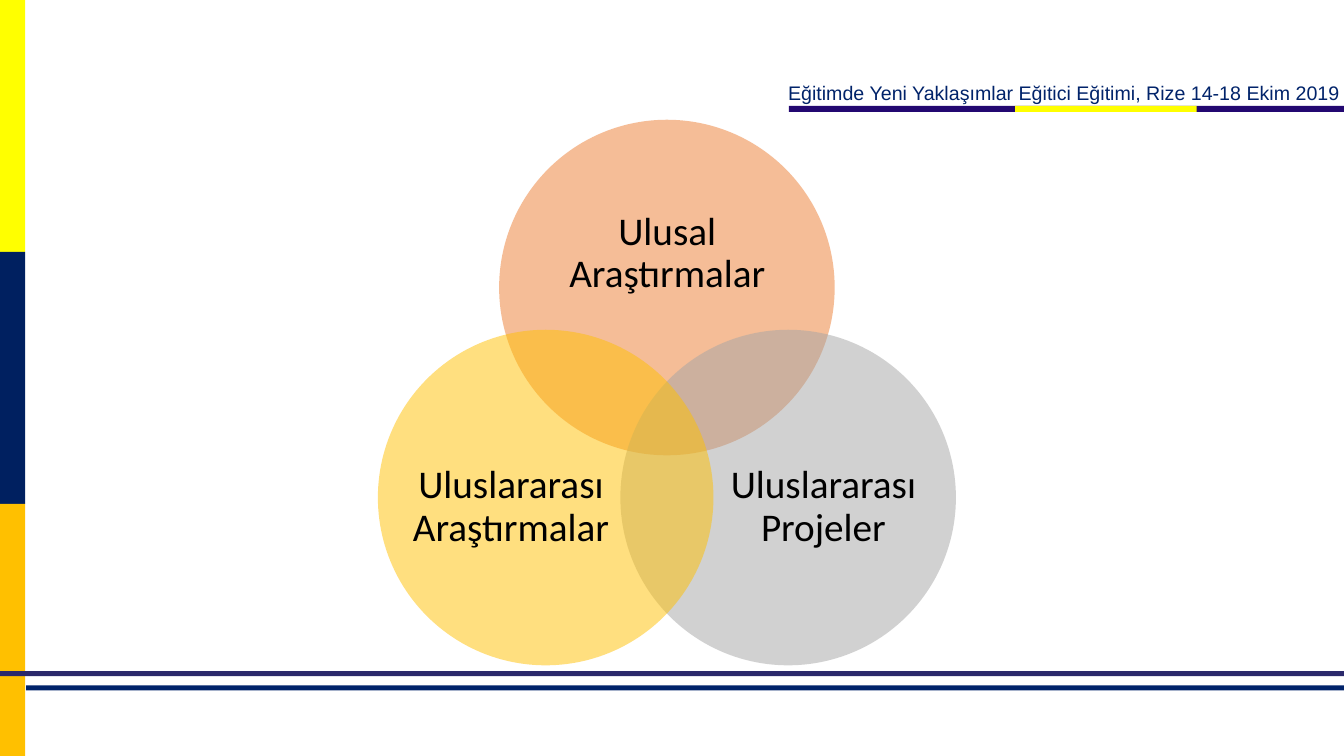
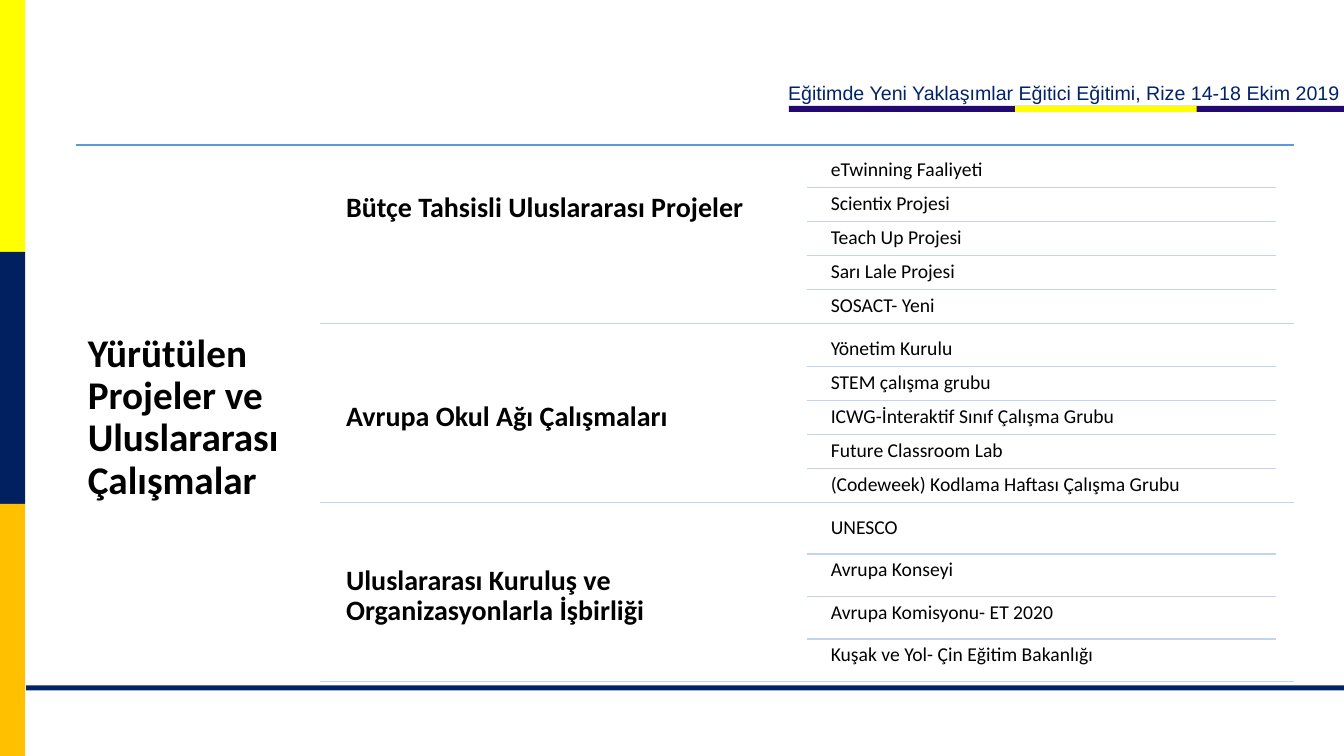
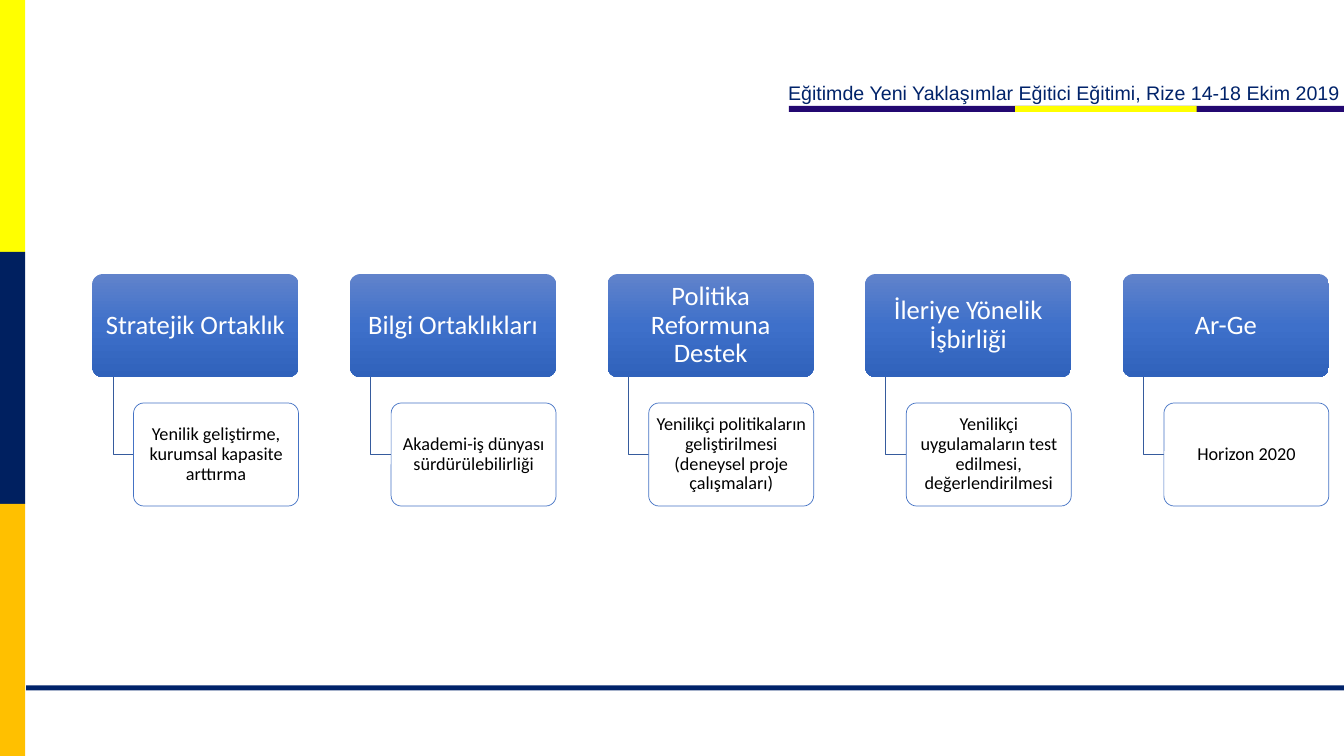
from copy import deepcopy
from dataclasses import dataclass
from math import cos, radians, sin
from typing import Optional

from lxml import etree
from pptx import Presentation
from pptx import presentation as prs
from pptx import slide as sld
from pptx.dml import color
from pptx.enum import shapes, text
from pptx.oxml import ns
from pptx.shapes import autoshape, base
from pptx.text import text as txt
from pptx import util as u

RGB = color.RGBColor
NAVY = RGB(0x01, 0x23, 0x6A)
DEEP_NAVY = RGB(0x00, 0x20, 0x60)
INDIGO = RGB(0x2B, 0x29, 0x6B)
PURPLE = RGB(0x23, 0x08, 0x71)
YELLOW = RGB(0xFF, 0xFF, 0x00)
AMBER = RGB(0xFF, 0xC0, 0x00)
ORANGE = RGB(0xED, 0x7D, 0x31)
GREY = RGB(0xA5, 0xA5, 0xA5)
BLACK = RGB(0x00, 0x00, 0x00)
WHITE = RGB(0xFF, 0xFF, 0xFF)
SKY = RGB(0x5B, 0x9B, 0xD5)
PALE_BLUE = RGB(0xC4, 0xD5, 0xEB)
BLUE = RGB(0x44, 0x72, 0xC4)
ELBOW_BLUE = RGB(0x36, 0x5B, 0x9D)
HEAD_GRADIENT = ((0, RGB(0x61, 0x83, 0xCB)), (0.5, RGB(0x3E, 0x70, 0xCA)),
                 (1, RGB(0x30, 0x62, 0xBB)))

SLIDE_WIDTH, SLIDE_HEIGHT = 960, 540
TITLE_ONLY, BLANK = 5, 6
EVENT = "Eğitimde Yeni Yaklaşımlar Eğitici Eğitimi, Rize 14-18 Ekim 2019"


@dataclass(frozen=True)
class Box:
    left: float
    top: float
    width: float
    height: float


@dataclass(frozen=True)
class Style:
    size: float
    color: RGB = BLACK
    bold: bool = False
    font: str = "Calibri"
    align: text.PP_ALIGN = text.PP_ALIGN.LEFT
    anchor: text.MSO_ANCHOR = text.MSO_ANCHOR.MIDDLE
    spacing: float = 0.9
    inset_x: float = 0
    inset_y: float = 0
    wrap: bool = True


CENTER = text.PP_ALIGN.CENTER
TOP = text.MSO_ANCHOR.TOP
EVENT_STYLE = Style(14, NAVY, font="Arial", anchor=TOP, spacing=1,
                    inset_x=7.2, inset_y=3.6, wrap=False)
CIRCLE_STYLE = Style(28, align=CENTER)
TITLE_STYLE = Style(28, bold=True, inset_x=8.4, inset_y=8.4)
GROUP_STYLE = Style(20, bold=True, inset_x=6, inset_y=6)
ITEM_STYLE = Style(14, anchor=TOP, inset_x=4.2, inset_y=4.2)
HEAD_STYLE = Style(19, WHITE, align=CENTER, inset_x=2.8, inset_y=2)
DETAIL_STYLE = Style(13, align=CENTER, inset_x=2, inset_y=1.5)


# Drawing helpers
def place(shape: base.BaseShape, box: Box) -> None:
    shape.left, shape.top = u.Pt(box.left), u.Pt(box.top)
    shape.width, shape.height = u.Pt(box.width), u.Pt(box.height)


def write(frame: txt.TextFrame, content: str, style: Style) -> None:
    frame.auto_size = text.MSO_AUTO_SIZE.NONE
    frame.word_wrap = style.wrap
    frame.vertical_anchor = style.anchor
    frame.margin_left = frame.margin_right = u.Pt(style.inset_x)
    frame.margin_top = frame.margin_bottom = u.Pt(style.inset_y)
    paragraph = frame.paragraphs[0]
    paragraph.alignment = style.align
    paragraph.line_spacing = style.spacing
    run = paragraph.add_run()
    run.text = content
    run.font.name, run.font.size = style.font, u.Pt(style.size)
    run.font.bold = style.bold
    run.font.color.rgb = style.color


def add_text(slide: sld.Slide, box: Box, content: str, style: Style) -> None:
    shape = slide.shapes.add_textbox(0, 0, 0, 0)
    place(shape, box)
    write(shape.text_frame, content, style)


def add_shape(slide: sld.Slide, kind: shapes.MSO_SHAPE, box: Box,
              fill: Optional[RGB] = None, opacity: int = 100,
              line: Optional[RGB] = None) -> autoshape.Shape:
    shape = slide.shapes.add_shape(kind, 0, 0, 0, 0)
    place(shape, box)
    shape.shadow.inherit = False
    if fill is not None:
        shape.fill.solid()
        shape.fill.fore_color.rgb = fill
        if opacity < 100:
            tone = shape.element.spPr.find(".//" + ns.qn("a:srgbClr"))
            etree.SubElement(tone, ns.qn("a:alpha"), val=str(opacity * 1000))
    if line is None:
        shape.line.fill.background()
    else:
        shape.line.color.rgb, shape.line.width = line, u.Pt(0.5)
    return shape


def add_bar(slide: sld.Slide, box: Box, fill: RGB) -> None:
    add_shape(slide, shapes.MSO_SHAPE.RECTANGLE, box, fill)


def add_rule(slide: sld.Slide, left: float, right: float, y: float, tone: RGB) -> None:
    rule = slide.shapes.add_connector(shapes.MSO_CONNECTOR.STRAIGHT, u.Pt(left),
                                      u.Pt(y), u.Pt(right), u.Pt(y))
    rule.line.color.rgb, rule.line.width = tone, u.Pt(1)
    etree.SubElement(rule.element.spPr, ns.qn("a:effectLst"))


def add_slide(presentation: prs.Presentation, layout: int) -> sld.Slide:
    """Add a slide with the shared bands, event line and rules."""
    slide = presentation.slides.add_slide(presentation.slide_layouts[layout])
    add_text(slide, Box(555.84, 54, 411.84, 24.5), EVENT, EVENT_STYLE)
    band = SLIDE_HEIGHT / 3
    for index, fill in enumerate((YELLOW, DEEP_NAVY, AMBER)):
        add_bar(slide, Box(0, index * band, 18, band), fill)
    add_bar(slide, Box(563.5, 75.6, SLIDE_WIDTH - 563.5, 4.3), PURPLE)
    add_bar(slide, Box(725.2, 75.6, 129.6, 4.3), YELLOW)
    add_bar(slide, Box(18.7, 489.5, SLIDE_WIDTH - 18.7, 3.6), NAVY)
    return slide


# Slide 1: three overlapping circles
@dataclass(frozen=True)
class Circle:
    label: str
    fill: RGB
    angle: float
    label_box: Box


CIRCLES = (
    Circle("Ulusal Araştırmalar", ORANGE, -90, Box(388.8, 127.4, 175.7, 108)),
    Circle("Uluslararası Projeler", GREY, 30, Box(516.2, 296.6, 144, 131.8)),
    Circle("Uluslararası Araştırmalar", AMBER, 150, Box(293, 296.6, 144, 131.8)),
)


def build_research(presentation: prs.Presentation) -> None:
    slide = add_slide(presentation, BLANK)
    hub_x, hub_y, reach, diameter = 476.4, 305.4, 100, 239.7
    for circle in CIRCLES:
        angle = radians(circle.angle)
        left = hub_x + reach * cos(angle) - diameter / 2
        top = hub_y + reach * sin(angle) - diameter / 2
        add_shape(slide, shapes.MSO_SHAPE.OVAL, Box(left, top, diameter, diameter),
                  circle.fill, opacity=50)
        add_text(slide, circle.label_box, circle.label, CIRCLE_STYLE)
    add_bar(slide, Box(0, 479.4, SLIDE_WIDTH, 3.6), INDIGO)


# Slide 2: titled list of project groups
@dataclass(frozen=True)
class Group:
    name: str
    items: tuple[str, ...]
    name_height: float = 121.7


GROUPS = (
    Group("Bütçe Tahsisli Uluslararası Projeler",
          ("eTwinning Faaliyeti", "Scientix Projesi", "Teach Up Projesi",
           "Sarı Lale Projesi", "SOSACT- Yeni"), name_height=78.5),
    Group("Avrupa Okul Ağı Çalışmaları",
          ("Yönetim Kurulu", "STEM çalışma grubu",
           "ICWG-İnteraktif Sınıf Çalışma Grubu", "Future Classroom Lab",
           "(Codeweek) Kodlama Haftası Çalışma Grubu")),
    Group("Uluslararası Kuruluş ve Organizasyonlarla İşbirliği",
          ("UNESCO", "Avrupa Konseyi", "Avrupa Komisyonu- ET 2020",
           "Kuşak ve Yol- Çin Eğitim Bakanlığı")),
)


def build_projects(presentation: prs.Presentation) -> None:
    slide = add_slide(presentation, TITLE_ONLY)
    left, right, list_top = 54.3, 924.3, 103.5
    group_height, group_gap, column_width = 121.7, 6.1, 334.8
    add_rule(slide, left, right, list_top, SKY)
    title = slide.shapes.title
    place(title, Box(left, list_top, 174, 390))
    write(title.text_frame, "Yürütülen Projeler ve Uluslararası Çalışmalar", TITLE_STYLE)
    for index, group in enumerate(GROUPS):
        top = list_top + group_gap + index * (group_height + group_gap)
        add_text(slide, Box(241.2, top, column_width, group.name_height),
                 group.name, GROUP_STYLE)
        row_height = group_height / len(group.items)
        for row, item in enumerate(group.items):
            y = top + row * row_height
            if row:
                add_rule(slide, 576.2, 911.2, y, PALE_BLUE)
            add_text(slide, Box(589.2, y, column_width, row_height), item, ITEM_STYLE)
        add_rule(slide, 228.3, right, top + group_height, PALE_BLUE)


# Slide 3: five headings, each with a detail box below
@dataclass(frozen=True)
class Branch:
    heading: str
    detail: str


BRANCHES = (
    Branch("Stratejik Ortaklık", "Yenilik geliştirme, kurumsal kapasite arttırma"),
    Branch("Bilgi Ortaklıkları", "Akademi-iş dünyası sürdürülebilirliği"),
    Branch("Politika Reformuna Destek",
           "Yenilikçi politikaların geliştirilmesi (deneysel proje çalışmaları)"),
    Branch("İleriye Yönelik İşbirliği",
           "Yenilikçi uygulamaların test edilmesi, değerlendirilmesi"),
    Branch("Ar-Ge", "Horizon 2020"),
)


def add_card(slide: sld.Slide, box: Box, fill: Optional[RGB] = None,
             line: Optional[RGB] = None) -> autoshape.Shape:
    card = add_shape(slide, shapes.MSO_SHAPE.ROUNDED_RECTANGLE, box, fill, 90, line)
    card.adjustments[0] = 0.1
    return card


def fill_gradient(shape: autoshape.Shape) -> None:
    shape.fill.gradient()
    shape.fill.gradient_angle = 270
    stops = shape.element.spPr.find(".//" + ns.qn("a:gsLst"))
    stops.insert(1, deepcopy(stops[0]))
    for stop, (position, tone) in zip(shape.fill.gradient_stops, HEAD_GRADIENT):
        stop.position, stop.color.rgb = position, tone


def add_elbow(slide: sld.Slide, left: float, top: float, right: float, bottom: float) -> None:
    builder = slide.shapes.build_freeform(u.Pt(left), u.Pt(top))
    builder.add_line_segments(((u.Pt(left), u.Pt(bottom)), (u.Pt(right), u.Pt(bottom))),
                              close=False)
    elbow = builder.convert_to_shape()
    elbow.shadow.inherit = False
    elbow.fill.background()
    elbow.line.color.rgb, elbow.line.width = ELBOW_BLUE, u.Pt(0.5)


def build_partnerships(presentation: prs.Presentation) -> None:
    slide = add_slide(presentation, BLANK)
    first_left, pitch, head_top, detail_top = 66, 184, 195.8, 287.9
    head_width, card_height, indent = 147.2, 73.6, 29.4
    for index, branch in enumerate(BRANCHES):
        left = first_left + index * pitch
        head = add_card(slide, Box(left, head_top, head_width, card_height))
        fill_gradient(head)
        write(head.text_frame, branch.heading, HEAD_STYLE)
        add_elbow(slide, left + indent / 2, head_top + card_height,
                  left + indent, detail_top + card_height / 2)
        detail = add_card(slide, Box(left + indent, detail_top, head_width - indent,
                                     card_height), WHITE, BLUE)
        write(detail.text_frame, branch.detail, DETAIL_STYLE)


def main() -> None:
    presentation = Presentation()
    presentation.slide_width = u.Pt(SLIDE_WIDTH)
    presentation.slide_height = u.Pt(SLIDE_HEIGHT)
    build_research(presentation)
    build_projects(presentation)
    build_partnerships(presentation)
    presentation.save("out.pptx")


if __name__ == "__main__":
    main()
